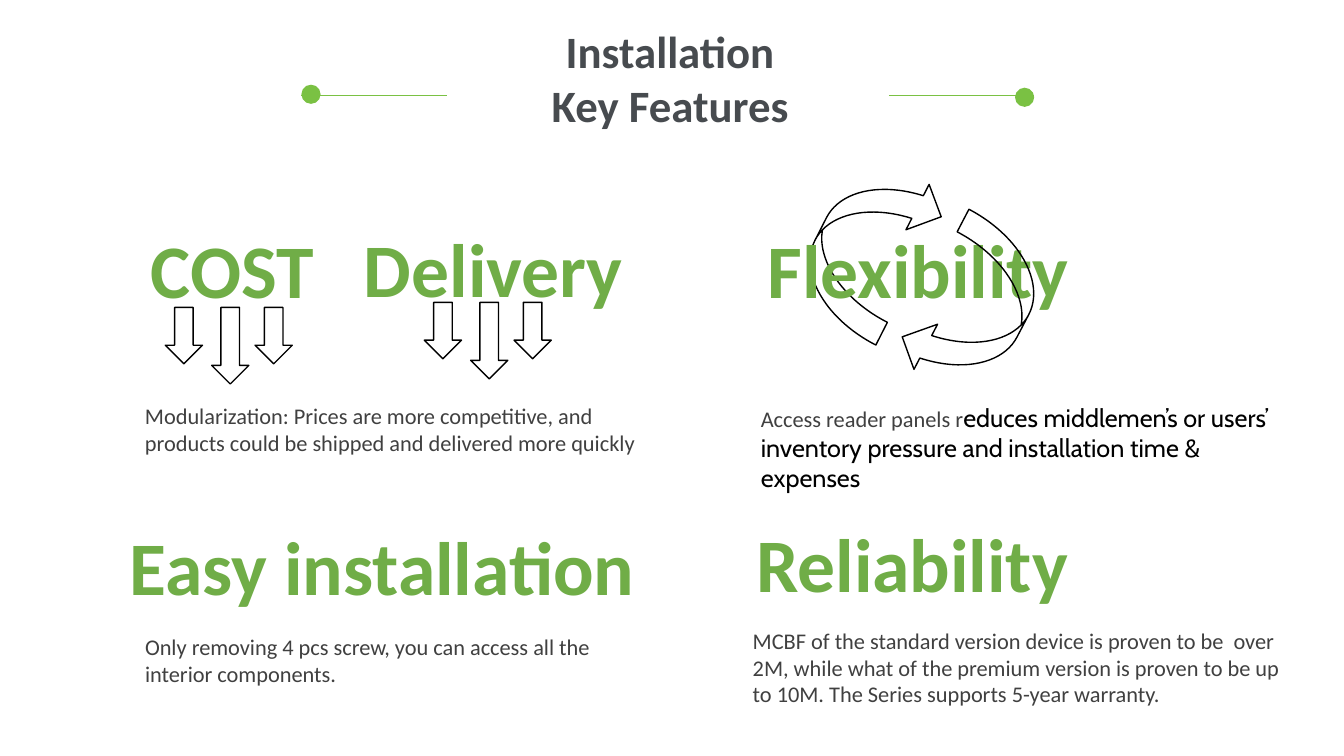
from dataclasses import dataclass

from lxml import etree
from pptx import Presentation
from pptx import util as u
from pptx.dml.color import RGBColor
from pptx.enum import shapes, text
from pptx.oxml.ns import qn

COLORS = {
    "heading": "70AD47",
    "accent": "7AC143",
    "title": "474B4F",
    "body": "404040",
    "black": "000000",
    "white": "FFFFFF",
}


@dataclass
class Heading:
    words: str
    left: float
    top: float
    width: float


@dataclass
class Run:
    words: str
    size: float = 16
    font: str = "Calibri"
    color: str = "body"


@dataclass
class Body:
    runs: list[Run]
    left: float
    top: float
    width: float
    height: float


@dataclass
class ArrowTrio:
    """Three down arrows, placed by the long middle one."""
    left: float
    top: float


@dataclass
class CycleArrow:
    left: float
    top: float
    rotation: float


@dataclass
class TitleRule:
    inner: float
    outer: float
    dot_left: float
    dot_top: float
    rotation: float


HEADINGS = [
    Heading("Easy installation", 71.3, 367.9, 403.2),
    Heading("Reliability", 521.3, 365.8, 260.6),
    Heading("Delivery", 243.4, 154.8, 218.2),
    Heading("COST", 91.4, 155.5, 149),
]
FLEXIBILITY = Heading("Flexibility", 528.5, 155.5, 254.9)

BODIES = [
    Body([Run("Modularization: Prices are more competitive, and products "
              "could be shipped and delivered more quickly")],
         96.5, 283.7, 386.6, 46),
    Body([Run("Access reader panels r"),
          Run("educes middlemen’s or users’ inventory pressure and "
              "installation time & expenses", 18, "Cabin", "black")],
         536.4, 283.7, 386.6, 72.7),
    Body([Run("Only removing 4 pcs screw, you can access all the "
              "interior components.")],
         96.5, 448.6, 367.9, 46),
    Body([Run("MCBF of the standard version device is proven to be  over 2M, "
              "while what of the premium version is proven to be up to 10M. "
              "The Series supports 5-year warranty.")],
         530.6, 444.2, 392.4, 65.5),
]

ARROW_TRIOS = [ArrowTrio(151.2, 219.6), ArrowTrio(336.2, 216)]
TRIO_PARTS = [(0, 54.7), (-33.1, 40.3), (31, 40.3)]  # offset, height
ARROW_WIDTH = 26.6

CYCLE_BACK = CycleArrow(560.2, 139.7, 297)
CYCLE_FRONT = CycleArrow(635.8, 183.6, 117.6)

RULE_TOP = 68.4
DOT_SIZE = 13.7
TITLE_RULES = [
    TitleRule(319, 215.3, 215.3, 60.5, 0),
    TitleRule(635, 738.7, 725, 62.6, 180),
]


def rgb(name: str) -> RGBColor:
    return RGBColor.from_string(COLORS[name])


def style_font(font, size: float, color: str, name: str = "Calibri",
               bold: bool = False) -> None:
    font.size = u.Pt(size)
    font.name = name
    font.bold = bold
    font.color.rgb = rgb(color)


def add_text_frame(parent, left: float, top: float, width: float,
                   height: float, wrap: bool = True):
    box = parent.add_textbox(u.Pt(left), u.Pt(top), u.Pt(width), u.Pt(height))
    box.text_frame.word_wrap = wrap
    box.text_frame.auto_size = text.MSO_AUTO_SIZE.SHAPE_TO_FIT_TEXT
    return box.text_frame


def add_heading(parent, heading: Heading) -> None:
    frame = add_text_frame(parent, heading.left, heading.top, heading.width,
                           73.1, wrap=False)
    paragraph = frame.paragraphs[0]
    paragraph.text = heading.words
    paragraph.alignment = text.PP_ALIGN.CENTER
    style_font(paragraph.font, 54, "heading", bold=True)
    # White outline around the letters
    properties = paragraph._p.pPr.find(qn("a:defRPr"))
    outline = etree.Element(qn("a:ln"), w=str(u.Pt(0.75)))
    fill = etree.SubElement(outline, qn("a:solidFill"))
    etree.SubElement(fill, qn("a:srgbClr"), val=COLORS["white"])
    properties.insert(0, outline)


def add_body(parent, body: Body) -> None:
    frame = add_text_frame(parent, body.left, body.top, body.width, body.height)
    paragraph = frame.paragraphs[0]
    for part in body.runs:
        run = paragraph.add_run()
        run.text = part.words
        if len(body.runs) > 1:
            style_font(run.font, part.size, part.color, part.font)
    if len(body.runs) == 1:
        part = body.runs[0]
        style_font(paragraph.font, part.size, part.color, part.font)


def add_outline_shape(parent, kind, left: float, top: float, width: float,
                      height: float, rotation: float = 0) -> None:
    shape = parent.add_shape(kind, u.Pt(left), u.Pt(top), u.Pt(width),
                             u.Pt(height))
    shape.rotation = rotation
    shape.shadow.inherit = False
    shape.fill.background()
    shape.line.color.rgb = rgb("black")
    shape.line.width = u.Pt(1)


def add_arrow_trio(parent, trio: ArrowTrio) -> None:
    for offset, height in TRIO_PARTS:
        add_outline_shape(parent, shapes.MSO_SHAPE.DOWN_ARROW,
                          trio.left + offset, trio.top, ARROW_WIDTH, height)


def add_cycle_arrow(parent, arrow: CycleArrow) -> None:
    add_outline_shape(parent, shapes.MSO_SHAPE.CURVED_DOWN_ARROW, arrow.left,
                      arrow.top, 121, 72.7, arrow.rotation)


def add_title_rule(parent, rule: TitleRule) -> None:
    line = parent.add_connector(shapes.MSO_CONNECTOR.STRAIGHT,
                                u.Pt(rule.inner), u.Pt(RULE_TOP),
                                u.Pt(rule.outer), u.Pt(RULE_TOP))
    line.line.color.rgb = rgb("accent")
    line.line.width = u.Pt(0.9)
    etree.SubElement(line._element.spPr, qn("a:effectLst"))
    dot = parent.add_shape(shapes.MSO_SHAPE.OVAL, u.Pt(rule.dot_left),
                           u.Pt(rule.dot_top), u.Pt(DOT_SIZE), u.Pt(DOT_SIZE))
    dot.rotation = rule.rotation
    dot.shadow.inherit = False
    dot.fill.solid()
    dot.fill.fore_color.rgb = rgb("accent")
    dot.line.fill.background()


def add_title(parent) -> None:
    frame = add_text_frame(parent, 235.4, 13.7, 486.7, 85)
    frame.text = "Installation\nKey Features"
    for paragraph in frame.paragraphs:
        paragraph.alignment = text.PP_ALIGN.CENTER
        style_font(paragraph.font, 32, "title", bold=True)
    for rule in TITLE_RULES:
        add_title_rule(parent, rule)


def main() -> None:
    presentation = Presentation()
    presentation.slide_width = u.Pt(960)
    presentation.slide_height = u.Pt(540)
    slide = presentation.slides.add_slide(presentation.slide_layouts[6])

    # The cycle arrows pass behind and in front of their heading
    add_cycle_arrow(slide.shapes, CYCLE_BACK)
    for trio in ARROW_TRIOS:
        add_arrow_trio(slide.shapes, trio)
    add_heading(slide.shapes, FLEXIBILITY)
    add_cycle_arrow(slide.shapes, CYCLE_FRONT)

    # Feature headings and descriptions
    for body in BODIES:
        add_body(slide.shapes, body)
    for heading in HEADINGS:
        add_heading(slide.shapes, heading)

    # Slide title with its side rules
    add_title(slide.shapes.add_group_shape().shapes)
    presentation.save("out.pptx")


if __name__ == "__main__":
    main()
